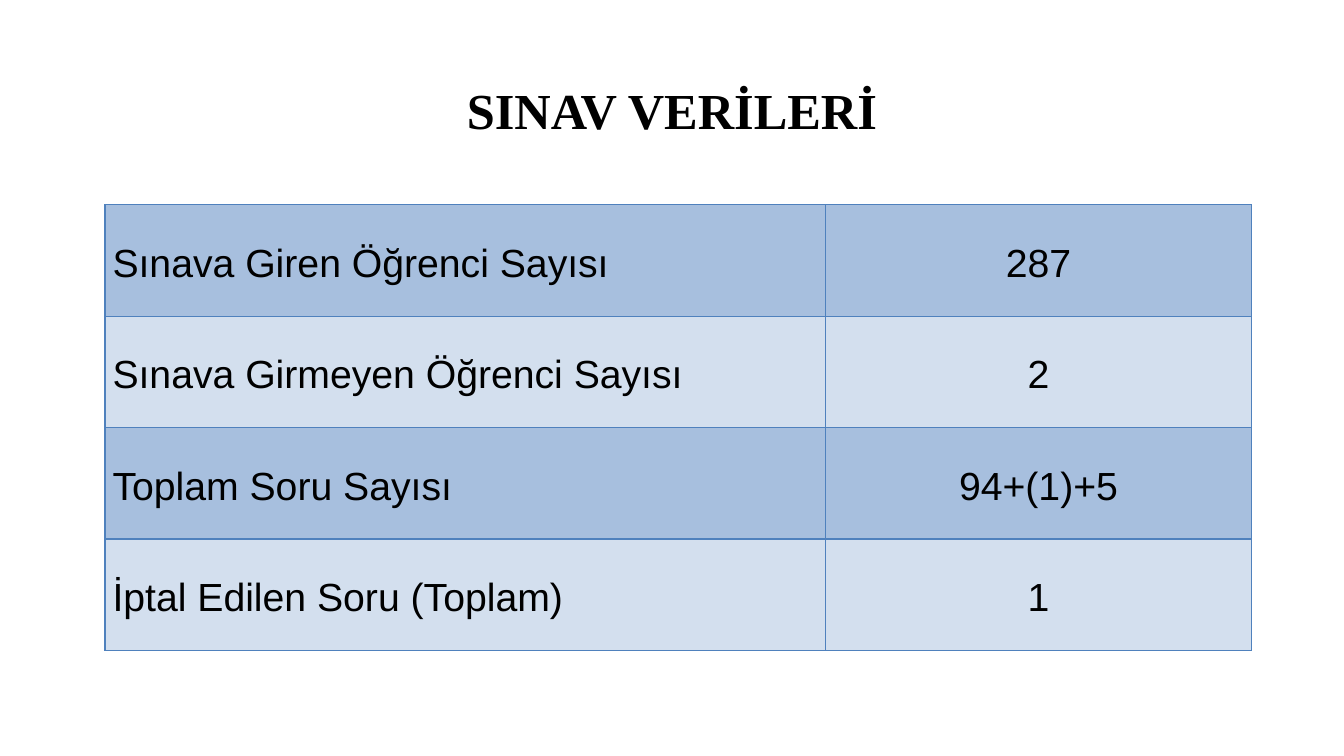
from dataclasses import dataclass

from lxml.etree import SubElement
from pptx import Presentation
from pptx.dml.color import RGBColor as Rgb
from pptx.enum.text import MSO_ANCHOR as Anchor, PP_ALIGN as Align
from pptx.oxml.ns import qn
from pptx.util import Pt


@dataclass(frozen=True)
class Theme:
    ink: str = "000000"
    border: str = "4F81BD"
    bands: tuple = ("A7BFDE", "D3DFEE")
    title_font: str = "Times New Roman"
    body_font: str = "Arial"
    title_size: float = 36
    body_size: float = 28
    border_width: float = 1


class SlideBuilder:
    def __init__(self, slide, theme):
        self.slide = slide
        self.theme = theme

    def set_text(self, frame, text, font_name, size, align, spacing, bold=False):
        frame.text = text
        paragraph = frame.paragraphs[0]
        paragraph.alignment = align
        paragraph.line_spacing = spacing
        font = paragraph.runs[0].font
        font.name = font_name
        font.size = Pt(size)
        font.bold = bold
        font.color.rgb = Rgb.from_string(self.theme.ink)

    def title(self, text, left, top, width, height):
        heading = self.slide.shapes.add_textbox(Pt(left), Pt(top), Pt(width), Pt(height))
        frame = heading.text_frame
        frame.word_wrap = True
        frame.vertical_anchor = Anchor.MIDDLE
        self.set_text(frame, text, self.theme.title_font, self.theme.title_size,
                      Align.CENTER, 0.9, bold=True)

    def outline(self, cell):
        properties = cell._tc.get_or_add_tcPr()
        for side in ("a:lnL", "a:lnR", "a:lnT", "a:lnB"):
            line = SubElement(properties, qn(side), w=str(Pt(self.theme.border_width)))
            fill = SubElement(line, qn("a:solidFill"))
            SubElement(fill, qn("a:srgbClr"), val=self.theme.border)

    def table(self, records, left, top, column_widths, row_height):
        grid = self.slide.shapes.add_table(
            len(records), len(column_widths), Pt(left), Pt(top),
            Pt(sum(column_widths)), Pt(row_height * len(records))).table
        grid.first_row = False
        grid.horz_banding = False
        for column, width in zip(grid.columns, column_widths):
            column.width = Pt(width)
        for index, (row, record) in enumerate(zip(grid.rows, records)):
            row.height = Pt(row_height)
            band = self.theme.bands[index % len(self.theme.bands)]
            for cell, text, align in zip(row.cells, record, (Align.LEFT, Align.CENTER)):
                self.outline(cell)
                cell.fill.solid()
                cell.fill.fore_color.rgb = Rgb.from_string(band)
                cell.vertical_anchor = Anchor.MIDDLE
                cell.margin_left = cell.margin_right = Pt(5.4)
                cell.margin_top = cell.margin_bottom = Pt(0)
                self.set_text(cell.text_frame, text, self.theme.body_font,
                              self.theme.body_size, align, 1.15)


def main():
    deck = Presentation()
    deck.slide_width, deck.slide_height = Pt(960), Pt(540)
    builder = SlideBuilder(deck.slides.add_slide(deck.slide_layouts[6]), Theme())
    builder.title("SINAV VERİLERİ", 66, 28.8, 828, 104.4)
    exam_figures = [
        ("Sınava Giren Öğrenci Sayısı", "287"),
        ("Sınava Girmeyen Öğrenci Sayısı", "2"),
        ("Toplam Soru Sayısı", "94+(1)+5"),
        ("İptal Edilen Soru (Toplam)", "1"),
    ]
    builder.table(exam_figures, 75, 146.2, (514.6, 304.4), 79.6)
    deck.save("out.pptx")


if __name__ == "__main__":
    main()
